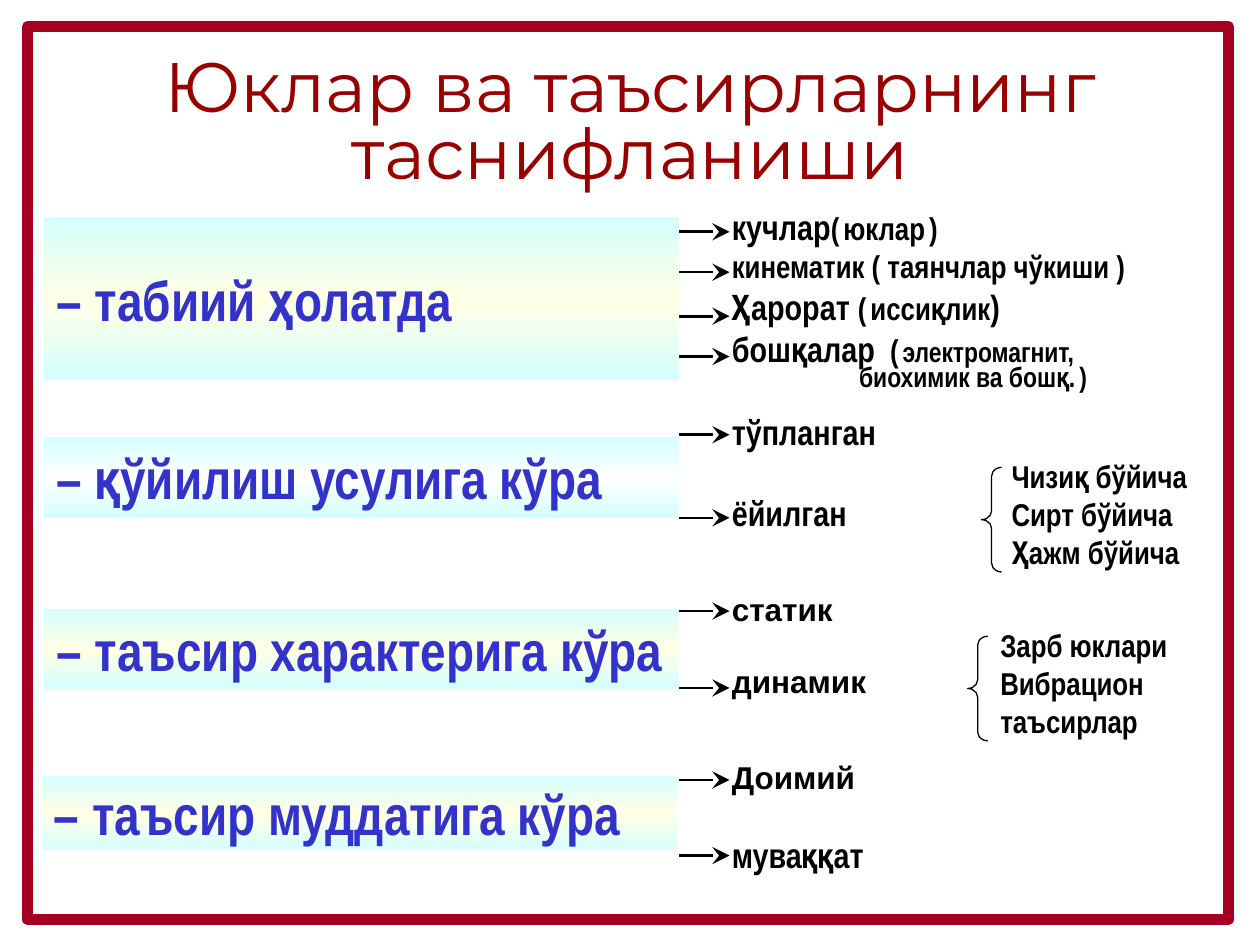
from copy import deepcopy

from lxml import etree
from pptx import Presentation
from pptx import util as u
from pptx.dml.color import RGBColor
from pptx.enum import shapes, text
from pptx.oxml.ns import qn

deck = Presentation()
deck.slide_width, deck.slide_height = u.Inches(10), u.Inches(7.5)
slide = deck.slides.add_slide(deck.slide_layouts[6])
CELL = deck.slide_width / 10  # the slide is a grid of 10 columns by 7.5 rows

NARROW = "Arial Narrow"
BLACK, CYAN, CREAM, WHITE = "000000", "D5FFFF", "FFFFE5", "FFFFFF"
BRANCH_LEFT, BRANCH_RIGHT, LABEL_LEFT = 5.39, 5.79, 5.71


def grid(*cells):
    return [u.Emu(round(cell * CELL)) for cell in cells]


def write(frame, lines, font, color, bold=True):
    """Fill a text frame with lines, each a list of (wording, size) runs."""
    frame.word_wrap = True
    for number, line in enumerate(lines):
        paragraph = frame.paragraphs[0] if number == 0 else frame.add_paragraph()
        for wording, size in line:
            run = paragraph.add_run()
            run.text = wording
            run.font.size, run.font.name, run.font.bold = u.Pt(size), font, bold
            run.font.color.rgb = RGBColor.from_string(color)
    return frame.paragraphs


# Title
title = slide.shapes.add_textbox(*grid(0.5, 0.37, 9, 1.25)).text_frame
title.vertical_anchor = text.MSO_ANCHOR.MIDDLE
heading, = write(title, [[("Юклар ва таъсирларнинг таснифланиши", 40)]],
                 "Montserrat", "990000", bold=False)
heading.alignment, heading.line_spacing = text.PP_ALIGN.CENTER, 0.8

# Slide frame
border = slide.shapes.add_shape(shapes.MSO_SHAPE.RECTANGLE, *grid(0.22, 0.21, 9.53, 7.09))
border.shadow.inherit = False
border.fill.background()
border.line.color.rgb = RGBColor.from_string("A50021")
border.line.width = u.Pt(6)

# Criteria: left, top, height, middle colour, wording
criteria = [
    (0.35, 1.72, 1.3, CREAM, "– табиий ҳолатда"),
    (0.35, 3.47, 0.64, WHITE, "– қўйилиш усулига кўра"),
    (0.35, 4.83, 0.64, CREAM, "– таъсир характерига кўра"),
    (0.33, 6.16, 0.59, CREAM, "– таъсир муддатига кўра"),
]
for left, top, height, middle, wording in criteria:
    panel = slide.shapes.add_shape(shapes.MSO_SHAPE.RECTANGLE, *grid(left, top, 5.04, height))
    panel.shadow.inherit = False
    panel.line.fill.background()
    panel.fill.gradient()
    panel.fill.gradient_angle = 90
    first_stop = panel.fill._fill._gradFill.find(qn("a:gsLst"))[0]
    first_stop.addnext(deepcopy(first_stop))
    for stop, position, color in zip(panel.fill.gradient_stops, (0, 0.5, 1), (CYAN, middle, CYAN)):
        stop.position = position
        stop.color.rgb = RGBColor.from_string(color)
    panel.text_frame.vertical_anchor = text.MSO_ANCHOR.MIDDLE
    criterion, = write(panel.text_frame, [[(wording, 32)]], NARROW, "3333CC")
    criterion.alignment = text.PP_ALIGN.LEFT

# Kinds by nature
by_nature = [
    [("кучлар", 20), ("(", 18), (" ", 10), ("юклар", 18), (" ", 10), (")", 18)],
    [("кинематик ( таянчлар чўкиши )", 18)],
    [("Ҳарорат ", 20), ("(", 18), (" ", 10), ("иссиқлик", 18), (")", 20)],
    [("бошқалар ", 20), (" (", 18), (" ", 10), ("электромагнит,", 16)],
    [("биохимик ва бошқ.", 16), (" ", 10), (")", 16)],
]
nature = slide.shapes.add_textbox(*grid(LABEL_LEFT, 1.58, 4.09, 1.62)).text_frame
continuation = write(nature, by_nature, NARROW, BLACK)[-1]
continuation.line_spacing = 0.7
continuation._p.get_or_add_pPr().set("marL", str(grid(1.01)[0]))

# Pairs of kinds: top, gap in points, then wording, size and font of each
pairs = [
    (3.21, 22, ("тўпланган", 20, NARROW), ("ёйилган", 20, NARROW)),
    (4.63, 20, ("статик", 18, "Arial"), ("динамик", 18, "Arial")),
    (5.97, 21, ("Доимий", 18, "Arial"), ("муваққат", 20, NARROW)),
]
for top, gap, upper, lower in pairs:
    pair = slide.shapes.add_textbox(*grid(LABEL_LEFT, top, 2.26, 1.05)).text_frame
    kinds = write(pair, [[upper[:2]], [lower[:2]]], NARROW, BLACK)
    kinds[1].space_before = u.Pt(gap)
    for kind, (_, _, font) in zip(kinds, (upper, lower)):
        kind.runs[0].font.name = font

# Arrows from the criteria to their kinds
for height in (1.84, 2.16, 2.51, 2.83, 3.45, 4.11, 4.85, 5.46, 6.19, 6.79):
    arrow = slide.shapes.add_connector(
        shapes.MSO_CONNECTOR.STRAIGHT, *grid(BRANCH_LEFT, height, BRANCH_RIGHT, height))
    arrow.line.color.rgb = RGBColor.from_string(BLACK)
    arrow.line.width = u.Pt(1.5)
    etree.SubElement(arrow.line._get_or_add_ln(), qn("a:tailEnd"), type="stealth", w="lg", len="lg")
    etree.SubElement(arrow._element.spPr, qn("a:effectLst"))

# Braced subkinds: brace left and top, text left, top and width, lines
subkinds = [
    (7.79, 3.71, 7.93, 3.58, 2.2, ["Чизиқ бўйича", "Сирт бўйича", "Ҳажм бўйича"]),
    (7.68, 5.05, 7.84, 4.92, 1.81, ["Зарб юклари", "Вибрацион таъсирлар"]),
]
for brace_left, brace_top, left, top, width, lines in subkinds:
    brace = slide.shapes.add_shape(
        shapes.MSO_SHAPE.LEFT_BRACE, *grid(brace_left, brace_top, 0.16, 0.83))
    brace.shadow.inherit = False
    brace.adjustments[0] = 0.44
    brace.fill.background()
    brace.line.color.rgb = RGBColor.from_string(BLACK)
    brace.line.width = u.Pt(0.75)
    members = slide.shapes.add_textbox(*grid(left, top, width, 1)).text_frame
    write(members, [[(line, 18)] for line in lines], NARROW, BLACK)

deck.save("out.pptx")
